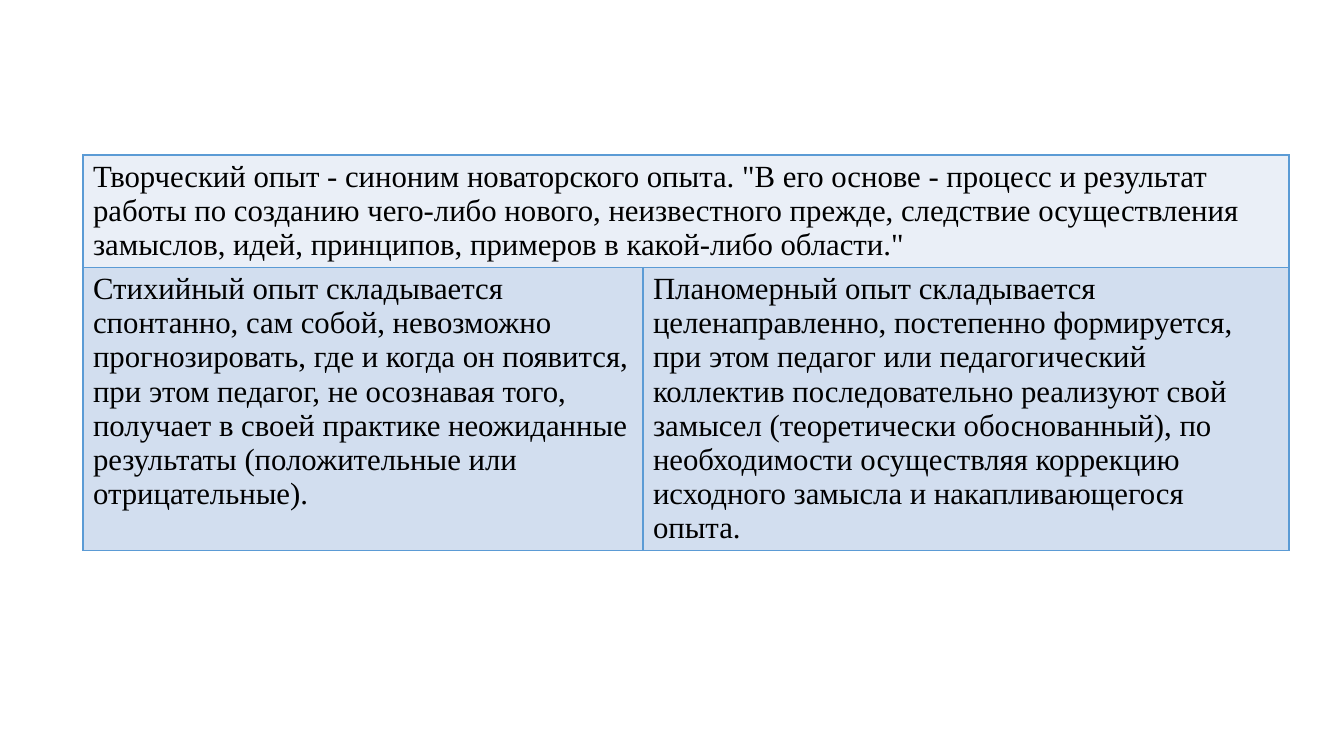
from lxml.etree import SubElement as Sub
from pptx import Presentation
from pptx.dml.color import RGBColor as RGB
from pptx.oxml.ns import qn
from pptx.util import Pt

EMU_PER_PX = 914400 / 100.8
COLORS = {"text": "000000", "border": "5B9BD5", "creative": "EAEFF7", "kinds": "D2DEEF"}
FONT = {"name": "Times New Roman", "size": Pt(22), "bold": False}


def px(length):
    return round(length * EMU_PER_PX)


deck = Presentation()
deck.slide_width, deck.slide_height = px(1344), px(756)
slide = deck.slides.add_slide(deck.slide_layouts[6])

# Definitions of the kinds of experience
creative = (
    'Творческий опыт - синоним новаторского опыта. "В его основе - процесс и результат '
    "работы по созданию чего-либо нового, неизвестного прежде, следствие осуществления "
    'замыслов, идей, принципов, примеров в какой-либо области."'
)
spontaneous = (
    "Стихийный опыт складывается спонтанно, сам собой, невозможно прогнозировать, "
    "где и когда он появится, при этом педагог, не осознавая того, получает в своей "
    "практике неожиданные результаты (положительные или отрицательные)."
)
planned = (
    "Планомерный опыт складывается целенаправленно, постепенно формируется, при этом "
    "педагог или педагогический коллектив последовательно реализуют свой замысел "
    "(теоретически обоснованный), по необходимости осуществляя коррекцию исходного "
    "замысла и накапливающегося опыта."
)
definitions = [("creative", [creative, ""]), ("kinds", [spontaneous, planned])]
widths, heights = [560, 646], [112, 283]

# Table grid
experience = slide.shapes.add_table(
    2, 2, px(83), px(155), px(sum(widths)), px(sum(heights))
).table
experience.first_row = experience.horz_banding = False
for column, width in zip(experience.columns, widths):
    column.width = px(width)
for row, height in zip(experience.rows, heights):
    row.height = px(height)
experience.cell(0, 0).merge(experience.cell(0, 1))

# Cell borders, fills and text
for row, (tint, texts) in zip(experience.rows, definitions):
    for cell, text in zip(row.cells, texts):
        props = cell._tc.get_or_add_tcPr()
        for side in ("lnL", "lnR", "lnT", "lnB"):
            line = Sub(props, qn(f"a:{side}"), w=str(Pt(1)))
            Sub(Sub(line, qn("a:solidFill")), qn("a:srgbClr"), val=COLORS["border"])
        cell.fill.solid()
        cell.fill.fore_color.rgb = RGB.from_string(COLORS[tint])
        if cell.is_spanned:
            continue
        cell.text = text
        font = cell.text_frame.paragraphs[0].runs[0].font
        for attribute, value in FONT.items():
            setattr(font, attribute, value)
        font.color.rgb = RGB.from_string(COLORS["text"])

deck.save("out.pptx")
